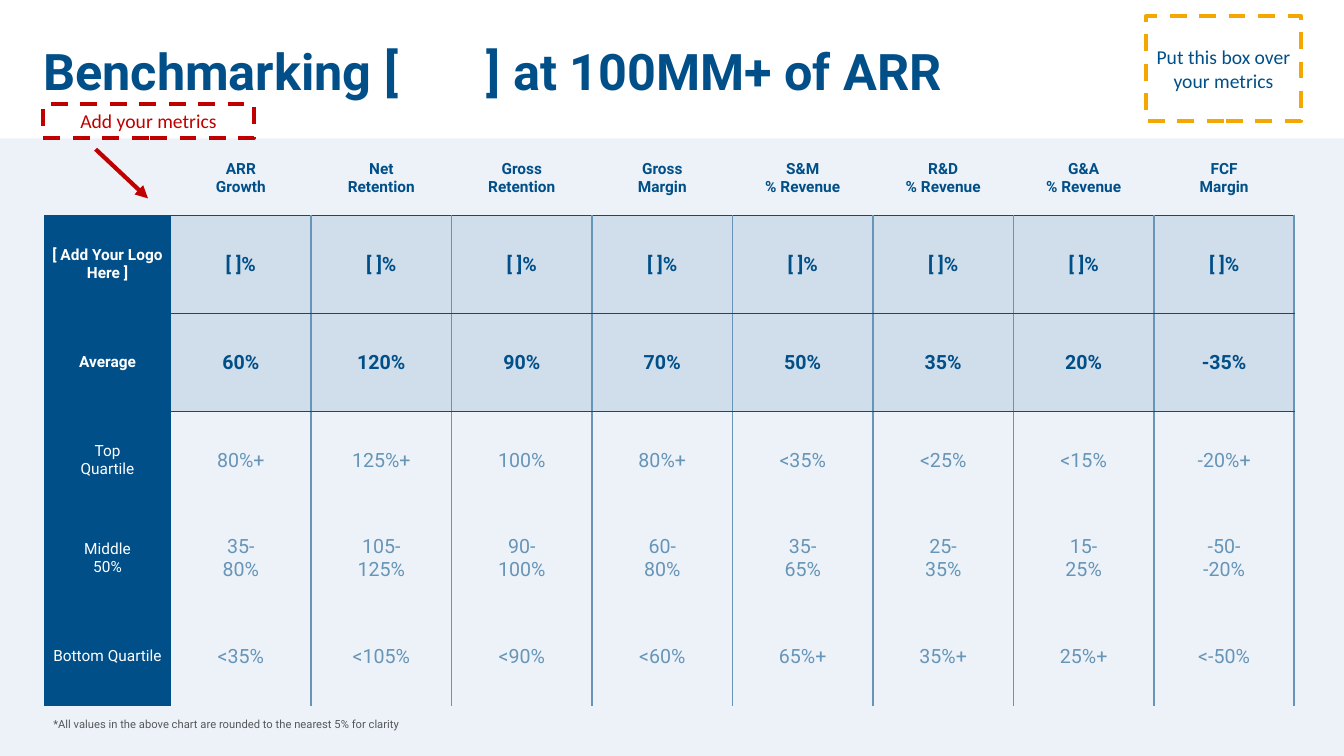
"""Builds a slide that benchmarks company metrics at 100MM+ of ARR."""
from dataclasses import dataclass

from lxml import etree
from pptx import Presentation
from pptx.dml.color import RGBColor
from pptx.enum import dml, shapes, text
from pptx.oxml import ns
from pptx.util import Cm, Pt

COLORS = {
    "navy": "014F88",
    "sky": "6695B7",
    "pale": "EDF2F9",
    "white": "FFFFFF",
    "grey": "54585A",
    "orange": "F4A601",
    "red": "C00000",
}
HEADERS = ["", "ARR\nGrowth", "Net\nRetention", "Gross\nRetention", "Gross\nMargin",
           "S&M\n% Revenue", "R&D\n% Revenue", "G&A\n% Revenue", "FCF\nMargin"]
LABEL_WIDTH, METRIC_WIDTH = Cm(3.18), Cm(3.54)
HEADER_HEIGHT, ROW_HEIGHT = Cm(1.9), Cm(2.47)


@dataclass
class BenchmarkRow:
    """One row of the benchmark table."""
    label: str
    values: list[str]
    highlighted: bool = False


@dataclass
class Callout:
    """A dashed box with a hint for the editor."""
    words: str
    left: float
    top: float
    width: float
    height: float
    line: str
    font: str


@dataclass
class CellStyle:
    """The look of one table cell."""
    color: str
    size: int
    bold: bool
    side_inset: float
    edge_inset: float
    borders: dict[str, tuple[str, float]]
    fill: str | None = None
    opacity: int = 100


ROWS = [
    BenchmarkRow("[ Add Your Logo Here ]", ["[ ]%"] * 8, True),
    BenchmarkRow("Average", ["60%", "120%", "90%", "70%", "50%", "35%", "20%", "-35%"], True),
    BenchmarkRow("Top\nQuartile",
                 ["80%+", "125%+", "100%", "80%+", "<35%", "<25%", "<15%", "-20%+"]),
    BenchmarkRow("Middle\n50%",
                 ["35-\n80%", "105-\n125%", "90-\n100%", "60-\n80%",
                  "35-\n65%", "25-\n35%", "15-\n25%", "-50-\n-20%"]),
    BenchmarkRow("Bottom Quartile",
                 ["<35%", "<105%", "<90%", "<60%", "65%+", "35%+", "25%+", "<-50%"]),
]
CALLOUTS = [
    Callout("Put this box over your metrics", 28.88, 0.41, 3.91, 2.64, "orange", "navy"),
    Callout("Add your metrics", 1.09, 2.62, 5.31, 0.86, "red", "red"),
]


def rgb(name: str) -> RGBColor:
    """Return a named colour."""
    return RGBColor.from_string(COLORS[name])


def set_font(paragraph, name: str, size: int, color: str, bold: bool = False) -> None:
    """Format the font of a whole paragraph."""
    font = paragraph.font
    font.name, font.size, font.bold = name, Pt(size), bold
    font.color.rgb = rgb(color)


def place(shape, left: float, top: float, width: float, height: float) -> None:
    """Move and size a shape, in centimetres."""
    shape.left, shape.top, shape.width, shape.height = map(Cm, (left, top, width, height))


def add_band(slide) -> None:
    """Add the pale band behind everything else."""
    band = slide.shapes.add_shape(shapes.MSO_SHAPE.RECTANGLE, 0, Cm(3.49), Cm(33.87), Cm(15.56))
    band.shadow.inherit = False
    band.fill.solid()
    band.fill.fore_color.rgb = rgb("pale")
    band.line.fill.background()
    slide.shapes._spTree.insert(2, band._element)


def fill_title(slide) -> None:
    """Write the title, with a wide gap between its brackets."""
    title = slide.shapes.title
    place(title, 1.09, 1.04, 29.21, 1.65)
    frame = title.text_frame
    frame.auto_size = text.MSO_AUTO_SIZE.NONE
    frame.vertical_anchor = text.MSO_ANCHOR.MIDDLE
    frame.margin_left = 0
    paragraph = frame.paragraphs[0]
    paragraph.alignment = text.PP_ALIGN.LEFT
    paragraph.line_spacing = 0.9
    set_font(paragraph, "Roboto", 36, "navy", True)
    for words in ("Benchmarking [", " ", "] at 100MM+ of ARR"):
        run = paragraph.add_run()
        run.text = words
        if words == " ":
            run.font._element.set("spc", "5400")


def fill_footnote(slide) -> None:
    """Write the rounding note under the table."""
    footnote = slide.placeholders[1]
    place(footnote, 1.09, 17.98, 14.58, 0.71)
    frame = footnote.text_frame
    frame.auto_size = text.MSO_AUTO_SIZE.NONE
    frame.text = "*All values in the above chart are rounded to the nearest 5% for clarity"
    paragraph = frame.paragraphs[0]
    properties = paragraph._p.get_or_add_pPr()
    properties.set("marL", "0")
    properties.set("indent", "0")
    etree.SubElement(properties, ns.qn("a:buNone"))
    paragraph.line_spacing = 0.9
    paragraph.space_before = Pt(0)
    set_font(paragraph, "Roboto", 8, "grey")


def fill_cell(cell, words: str, style: CellStyle) -> None:
    """Write and format one table cell."""
    cell.text = words
    cell.vertical_anchor = text.MSO_ANCHOR.MIDDLE
    cell.margin_left = cell.margin_right = Cm(style.side_inset)
    cell.margin_top = cell.margin_bottom = Cm(style.edge_inset)
    for paragraph in cell.text_frame.paragraphs:
        paragraph.alignment = text.PP_ALIGN.CENTER
        set_font(paragraph, "Roboto", style.size, style.color, style.bold)
    properties = cell._tc.get_or_add_tcPr()
    for side in "LRTB":
        line = etree.SubElement(properties, ns.qn(f"a:ln{side}"))
        if side in style.borders:
            color, width = style.borders[side]
            line.set("w", str(Pt(width)))
            solid = etree.SubElement(line, ns.qn("a:solidFill"))
            etree.SubElement(solid, ns.qn("a:srgbClr"), val=COLORS[color])
        else:
            etree.SubElement(line, ns.qn("a:noFill"))
    if style.fill is None:
        cell.fill.background()
        return
    cell.fill.solid()
    cell.fill.fore_color.rgb = rgb(style.fill)
    if style.opacity < 100:
        for color in properties.findall("/".join(map(ns.qn, ("a:solidFill", "a:srgbClr")))):
            etree.SubElement(color, ns.qn("a:alpha"), val=str(style.opacity * 1000))


def add_benchmark_table(slide) -> None:
    """Add the table of metrics by quartile."""
    columns = len(HEADERS)
    frame = slide.shapes.add_table(
        len(ROWS) + 1, columns, Cm(1.12), Cm(3.53),
        LABEL_WIDTH + METRIC_WIDTH * (columns - 1), HEADER_HEIGHT + ROW_HEIGHT * len(ROWS))
    table = frame.table
    table.first_row = table.horz_banding = False
    for index, column in enumerate(table.columns):
        column.width = METRIC_WIDTH if index else LABEL_WIDTH
    for index, table_row in enumerate(table.rows):
        table_row.height = ROW_HEIGHT if index else HEADER_HEIGHT
    rule, divider = ("navy", 1), ("sky", 1.5)
    header_style = CellStyle("navy", 11, True, 0, 0, {"B": rule})
    for index, header in enumerate(HEADERS):
        fill_cell(table.cell(0, index), header, header_style)
    for number, row in enumerate(ROWS, start=1):
        edges = {"T": rule} if number == 1 or ROWS[number - 2].highlighted else {}
        if row.highlighted:
            edges["B"] = rule
        fill_cell(table.cell(number, 0), row.label,
                  CellStyle("white", 11, row.highlighted, 0, 0.13, edges | {"R": rule}, "navy"))
        for index, value in enumerate(row.values, start=1):
            borders = edges | {"L": rule if index == 1 else divider, "R": divider}
            fill_cell(table.cell(number, index), value,
                      CellStyle("navy" if row.highlighted else "sky", 14, row.highlighted,
                                0.25, 0.13, borders, "navy" if row.highlighted else None, 12))


def add_callout(slide, callout: Callout) -> None:
    """Add a dashed box with its hint."""
    box = slide.shapes.add_shape(shapes.MSO_SHAPE.RECTANGLE, 0, 0, 0, 0)
    place(box, callout.left, callout.top, callout.width, callout.height)
    box.shadow.inherit = False
    box.fill.background()
    box.line.color.rgb = rgb(callout.line)
    box.line.width = Pt(3)
    box.line.dash_style = dml.MSO_LINE.DASH
    frame = box.text_frame
    frame.word_wrap = True
    frame.vertical_anchor = text.MSO_ANCHOR.MIDDLE
    frame.text = callout.words
    frame.paragraphs[0].alignment = text.PP_ALIGN.CENTER
    set_font(frame.paragraphs[0], "Calibri", 14, callout.font)


def add_arrow(slide) -> None:
    """Add the red arrow that points at the first row."""
    arrow = slide.shapes.add_connector(
        shapes.MSO_CONNECTOR.STRAIGHT, Cm(2.41), Cm(3.76), Cm(3.73), Cm(5))
    arrow.line.color.rgb = rgb("red")
    arrow.line.width = Pt(3)
    etree.SubElement(arrow.line._get_or_add_ln(), ns.qn("a:tailEnd"), type="triangle")
    etree.SubElement(arrow._element.spPr, ns.qn("a:effectLst"))


def main() -> None:
    """Build and save the presentation."""
    presentation = Presentation()
    presentation.slide_width, presentation.slide_height = Cm(33.87), Cm(19.05)
    slide = presentation.slides.add_slide(presentation.slide_layouts[1])
    add_band(slide)
    fill_title(slide)
    fill_footnote(slide)
    add_benchmark_table(slide)
    for callout in CALLOUTS:
        add_callout(slide, callout)
    add_arrow(slide)
    presentation.save("out.pptx")


if __name__ == "__main__":
    main()
